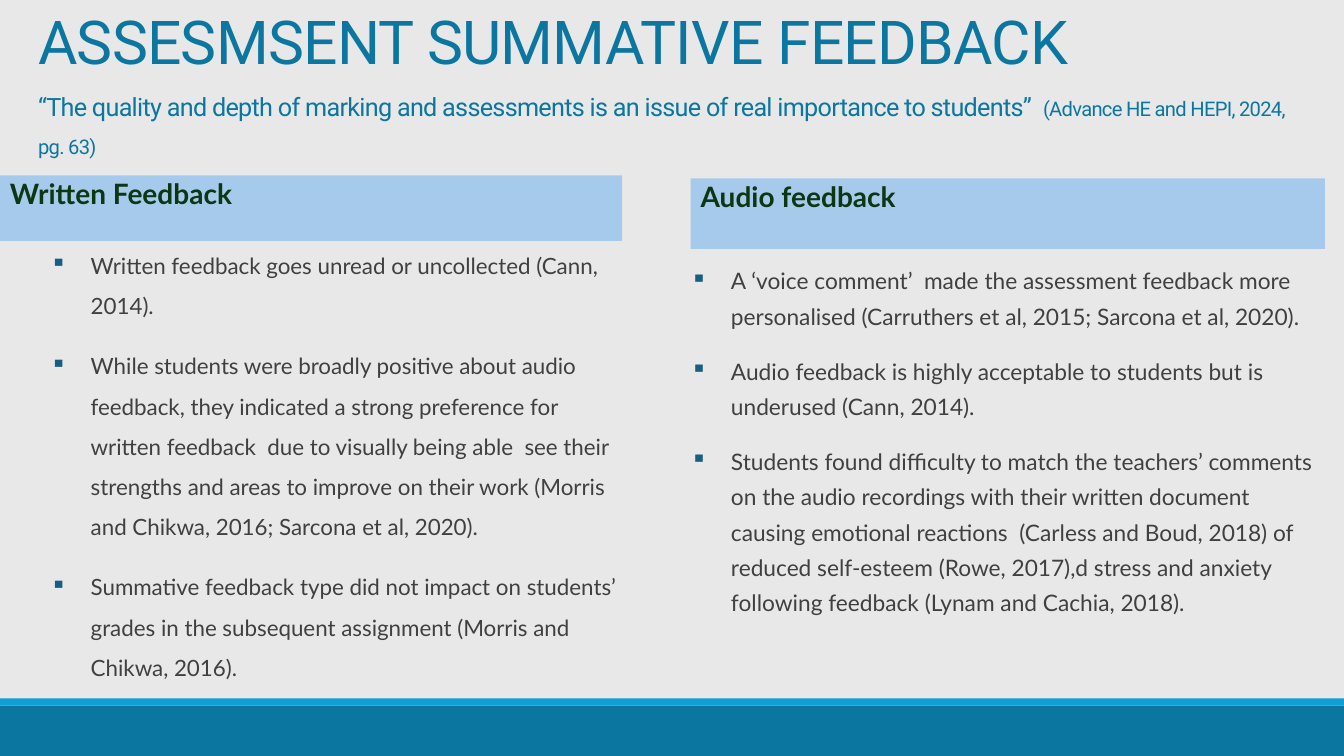
from lxml import etree
from pptx import Presentation
from pptx.dml.color import RGBColor
from pptx.enum.shapes import MSO_SHAPE
from pptx.enum.text import MSO_ANCHOR, PP_ALIGN
from pptx.oxml.ns import qn
from pptx.util import Inches, Pt

RECT = MSO_SHAPE.RECTANGLE
TOP, BOTTOM = MSO_ANCHOR.TOP, MSO_ANCHOR.BOTTOM
LEFT = PP_ALIGN.LEFT
COLORS = {"back": "E8E8E8", "teal": "0B76A0", "sky": "0F9ED5",
          "band": "A6CAEC", "head": "0D3612", "text": "404040",
          "mark": "156082"}
WIDE, HIGH = 13.33, 7.5

WRITTEN = [
    "Written feedback goes unread or uncollected (Cann, 2014).",
    "While students were broadly positive about audio feedback, they indicated a strong preference for written feedback  due to visually being able  see their strengths and areas to improve on their work (Morris and Chikwa, 2016; Sarcona et al, 2020).",
    "Summative feedback type did not impact on students’ grades in the subsequent assignment (Morris and Chikwa, 2016).",
]
AUDIO = [
    "A ‘voice comment’  made the assessment feedback more personalised (Carruthers et al, 2015; Sarcona et al, 2020).",
    "Audio feedback is highly acceptable to students but is underused (Cann, 2014).",
    "Students found difficulty to match the teachers’ comments on the audio recordings with their written document causing emotional reactions  (Carless and Boud, 2018) of reduced self-esteem (Rowe, 2017),d stress and anxiety following feedback (Lynam and Cachia, 2018).",
]


def tint(name):
    return RGBColor.from_string(COLORS[name])


def add_run(para, text, size, font="Lato", color="text", bold=False, track=0):
    """Add formatted text; track is letter spacing in points."""
    run = para.add_run()
    run.text = text
    run.font.size = Pt(size)
    run.font.name = font
    run.font.bold = bold
    run.font.color.rgb = tint(color)
    if track:
        run.font._element.set("spc", str(int(track * 100)))


def set_frame(shape, side, anchor=TOP):
    """Wrap the text of a shape and set its insets."""
    frame = shape.text_frame
    frame.word_wrap = True
    frame.vertical_anchor = anchor
    frame.margin_left = frame.margin_right = Inches(side)
    frame.margin_top = frame.margin_bottom = Inches(0.05)
    return frame


def add_box(slide, box):
    return slide.shapes.add_textbox(*map(Inches, box))


def add_bar(slide, box, color):
    bar = slide.shapes.add_shape(RECT, *map(Inches, box))
    bar.shadow.inherit = False
    bar.fill.solid()
    bar.fill.fore_color.rgb = tint(color)
    bar.line.fill.background()
    return bar


def add_mark(para):
    """Give a paragraph a hanging square bullet."""
    props = para._p.get_or_add_pPr()
    props.set("marL", str(Inches(0.4)))
    props.set("indent", str(-Inches(0.4)))
    shade = etree.SubElement(props, qn("a:buClr"))
    etree.SubElement(shade, qn("a:srgbClr"), val=COLORS["mark"])
    etree.SubElement(props, qn("a:buChar"), char="▪")


def add_foot(slide, top):
    add_bar(slide, (0, top, WIDE, HIGH - top), "teal")
    add_bar(slide, (0, top - 0.07, WIDE, 0.07), "sky")


def add_title(slide, box):
    para = set_frame(add_box(slide, box), 0.1, BOTTOM).paragraphs[0]
    para.line_spacing = 1.5
    style = {"font": "Roboto", "color": "teal", "track": -0.5}
    add_run(para, "ASSESMSENT SUMMATIVE FEEDBACK", 43.2, **style)
    para.add_line_break()
    add_run(para, "“The quality and depth of marking and assessments is an issue of real importance to students”  ", 18, **style)
    add_run(para, "(Advance HE and HEPI, 2024, pg. 63)", 14.4, **style)


def add_head(slide, box, text):
    para = set_frame(add_bar(slide, box, "band"), 0.1).paragraphs[0]
    para.alignment = LEFT
    para.line_spacing = 0.9
    add_run(para, text, 20, color="head", bold=True)


def add_list(slide, box, items, size, lead):
    frame = set_frame(add_box(slide, box), 0)
    for i, item in enumerate(items):
        para = frame.add_paragraph() if i else frame.paragraphs[0]
        add_mark(para)
        para.line_spacing = lead
        para.space_before = Pt(12 if i else 0)
        para.space_after = Pt(2)
        add_run(para, item, size)


def main():
    deck = Presentation()
    deck.slide_width, deck.slide_height = Inches(WIDE), Inches(HIGH)
    slide = deck.slides.add_slide(deck.slide_layouts[6])
    slide.background.fill.solid()
    slide.background.fill.fore_color.rgb = tint("back")
    add_foot(slide, 7)
    add_title(slide, (0.28, 0.16, 12.86, 1.46))
    add_head(slide, (0, 1.74, 6.17, 0.65), "Written Feedback")
    add_list(slide, (0.5, 2.32, 5.67, 4.46), WRITTEN, 16, 1.5)
    add_head(slide, (6.85, 1.77, 6.29, 0.7), "Audio feedback")
    add_list(slide, (6.85, 2.52, 6.29, 3.99), AUDIO, 16.2, 1.3)
    deck.save("out.pptx")


if __name__ == "__main__":
    main()
